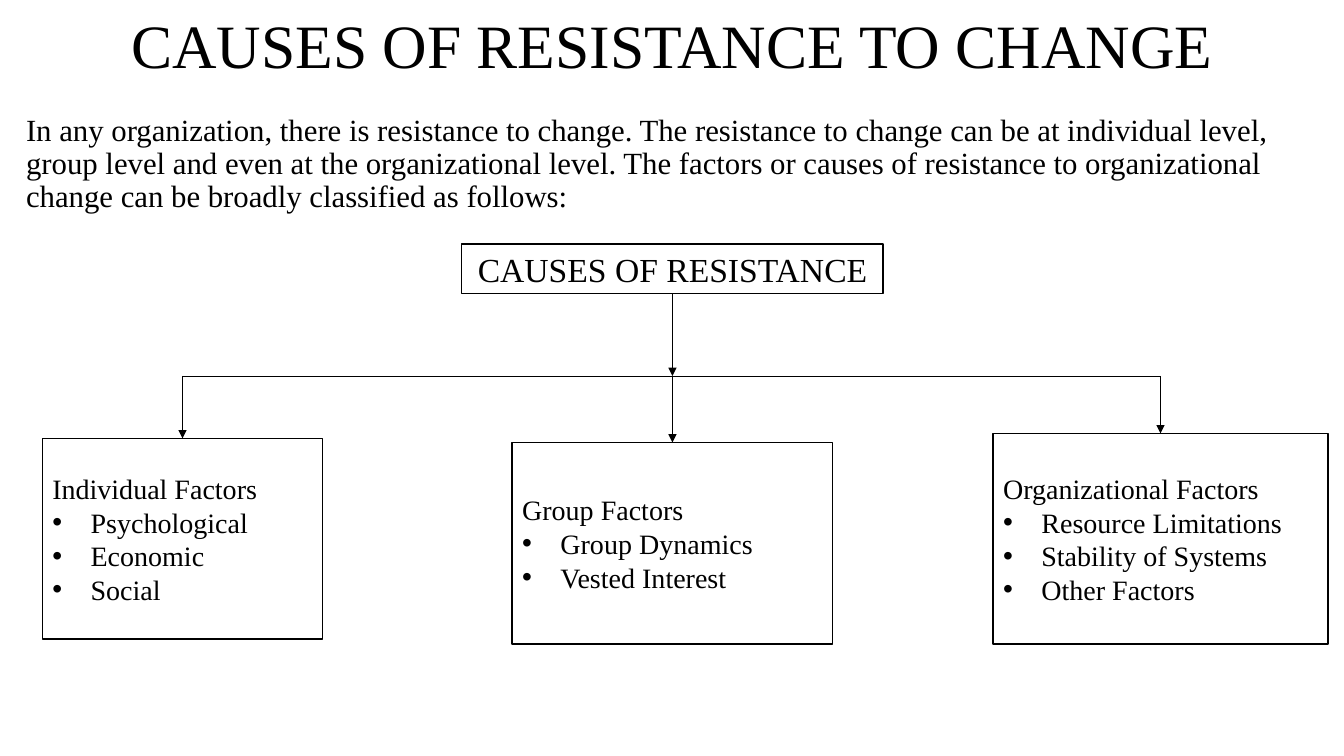
import pptx
import pptx.util
import pptx.dml.color
import pptx.enum.shapes
import pptx.enum.text
import lxml.etree
import pptx.oxml.ns

Inches, Pt = pptx.util.Inches, pptx.util.Pt
PP_ALIGN, ANCHOR = pptx.enum.text.PP_ALIGN, pptx.enum.text.MSO_ANCHOR
COLORS = {"ink": "000000", "paper": "FFFFFF"}
RGB = {name: pptx.dml.color.RGBColor.from_string(c) for name, c in COLORS.items()}
FONT = "Times New Roman"
BAR_Y = 3.73
ROOT_BOX = (4.58, 2.42, 4.18, 0.49)
FACTORS = [
    ((0.42, 4.35, 2.78, 1.99),
     ["Individual Factors", "Psychological", "Economic", "Social"]),
    ((5.08, 4.39, 3.18, 2),
     ["Group Factors", "Group Dynamics", "Vested Interest"]),
    ((9.85, 4.3, 3.32, 2.09),
     ["Organizational Factors", "Resource Limitations", "Stability of Systems",
      "Other Factors"]),
]


def write(s, lines, size, align, anchor, spacing=1.0):
    """Fill a shape with paragraphs; every line after the first is a bullet."""
    tf = s.text_frame
    tf.word_wrap = True
    tf.auto_size = pptx.enum.text.MSO_AUTO_SIZE.NONE
    tf.vertical_anchor = anchor
    for i, line in enumerate(lines):
        p = tf.add_paragraph() if i else tf.paragraphs[0]
        if i:
            pPr = p._p.get_or_add_pPr()
            pPr.set("marL", str(Inches(0.38)))
            pPr.set("indent", str(-Inches(0.38)))
            for tag, key, value in [("a:buFont", "typeface", "Arial"),
                                    ("a:buChar", "char", "•")]:
                lxml.etree.SubElement(pPr, pptx.oxml.ns.qn(tag)).set(key, value)
        p.alignment = align
        p.line_spacing = spacing
        r = p.add_run()
        r.text = line
        for key, value in {"name": FONT, "size": Pt(size)}.items():
            setattr(r.font, key, value)
        r.font.color.rgb = RGB["ink"]


def connect(x1, y1, x2, y2, arrow=True):
    c = s_shapes.add_connector(pptx.enum.shapes.MSO_CONNECTOR.STRAIGHT,
                               *map(Inches, (x1, y1, x2, y2)))
    c.line.color.rgb = RGB["ink"]
    c.line.width = Pt(0.5)
    if arrow:
        lxml.etree.SubElement(c.line._get_or_add_ln(),
                              pptx.oxml.ns.qn("a:tailEnd")).set("type", "triangle")
    lxml.etree.SubElement(c._element.spPr, pptx.oxml.ns.qn("a:effectLst"))
    return c


prs = pptx.Presentation()
prs.slide_width, prs.slide_height = Inches(13.33), Inches(7.5)
slide = prs.slides.add_slide(prs.slide_layouts[5])
s_shapes = slide.shapes

title = s_shapes.title
title.left, title.top, title.width, title.height = map(Inches, (0.55, 0.13, 12.24, 0.71))
write(title, ["CAUSES OF RESISTANCE TO CHANGE"], 44, PP_ALIGN.CENTER, ANCHOR.MIDDLE, 0.9)

intro = s_shapes.add_textbox(*map(Inches, (0.16, 1.09, 12.62, 6.41)))
write(intro, ["In any organization, there is resistance to change. The resistance to "
              "change can be at individual level, group level and even at the "
              "organizational level. The factors or causes of resistance to "
              "organizational change can be broadly classified as follows:"],
      22, PP_ALIGN.LEFT, ANCHOR.TOP, 0.9)

boxes = []
for place, lines in [(ROOT_BOX, ["CAUSES OF RESISTANCE"])] + FACTORS:
    s = s_shapes.add_shape(pptx.enum.shapes.MSO_SHAPE.RECTANGLE, *map(Inches, place))
    s.shadow.inherit = False
    s.fill.solid()
    s.fill.fore_color.rgb = RGB["paper"]
    s.line.color.rgb = RGB["ink"]
    s.line.width = Pt(1)
    is_root = place == ROOT_BOX
    write(s, lines, 24 if is_root else 20,
          PP_ALIGN.CENTER if is_root else PP_ALIGN.LEFT, ANCHOR.MIDDLE)
    boxes.append(s)

root, *factor_boxes = boxes
centers = [left + width / 2 for (left, top, width, height), lines in FACTORS]
root_x = ROOT_BOX[0] + ROOT_BOX[2] / 2

trunk = connect(root_x, ROOT_BOX[1] + ROOT_BOX[3], root_x, BAR_Y)
trunk.begin_connect(root, 2)
connect(centers[0], BAR_Y, centers[-1], BAR_Y, arrow=False)
for x, (place, lines), box in zip(centers, FACTORS, factor_boxes):
    branch = connect(x, BAR_Y, x, place[1])
    branch.end_connect(box, 0)

prs.save("out.pptx")
